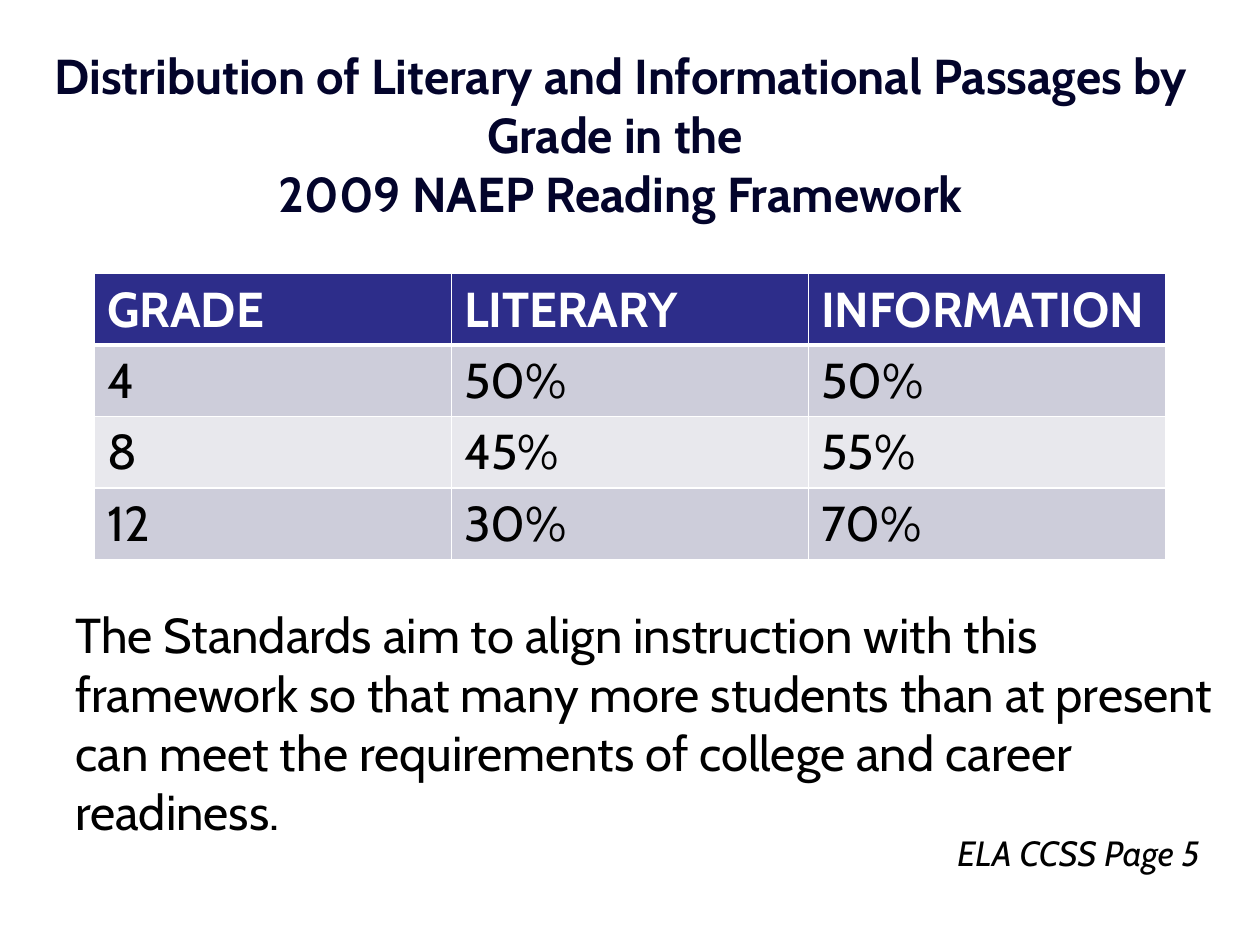
import pptx
import pptx.dml.color
import pptx.enum.text
import pptx.oxml
import pptx.oxml.ns
import pptx.util

COLORS = {
    "title": "03042B",
    "header": "2D2D8A",
    "band": "CDCDDA",
    "plain": "E8E8ED",
    "white": "FFFFFF",
    "text": "000000",
}
COLUMNS, ROWS = 40, 30


class Deck:
    font = "Cabin"
    size = 28

    def __init__(self, width, height):
        self.presentation = pptx.Presentation()
        self.presentation.slide_width = pptx.util.Inches(width)
        self.presentation.slide_height = pptx.util.Inches(height)
        self.slide = self.presentation.slides.add_slide(self.presentation.slide_layouts[6])

    def area(self, left, top, width, height):
        column = self.presentation.slide_width / COLUMNS
        row = self.presentation.slide_height / ROWS
        return [round(n * unit) for n, unit in zip((left, top, width, height), (column, row) * 2)]

    def add_words(self, paragraph, words, color="text", size=None, bold=False, italic=False):
        run = paragraph.add_run()
        run.text = words
        run.font.name = self.font
        run.font.size = pptx.util.Pt(size or self.size)
        run.font.bold = bold
        run.font.italic = italic
        run.font.color.rgb = pptx.dml.color.RGBColor.from_string(COLORS[color])

    def text(self, lines, place, align="LEFT", anchor="TOP", wrap=True, **style):
        frame = self.slide.shapes.add_textbox(*self.area(*place)).text_frame
        frame.word_wrap = wrap
        frame.vertical_anchor = pptx.enum.text.MSO_ANCHOR[anchor]
        paragraph = frame.paragraphs[0]
        paragraph.alignment = pptx.enum.text.PP_ALIGN[align]
        for number, line in enumerate(lines):
            if number:
                paragraph.add_line_break()
            self.add_words(paragraph, line, **style)

    def border(self, cell, **widths):
        properties = cell._tc.get_or_add_tcPr()
        namespace = pptx.oxml.ns.nsdecls("a")
        for position, (side, width) in enumerate(widths.items()):
            properties.insert(position, pptx.oxml.parse_xml(
                f'<a:ln{side} {namespace} w="{pptx.util.Pt(width)}"><a:solidFill>'
                f'<a:srgbClr val="{COLORS["white"]}"/></a:solidFill></a:ln{side}>'))

    def table(self, records, place):
        area = self.area(*place)
        grid = self.slide.shapes.add_table(len(records), len(records[0]), *area).table
        for r, record in enumerate(records):
            grid.rows[r].height = area[3] // len(records)
            header = r == 0
            fill = "header" if header else "band" if r % 2 else "plain"
            for c, words in enumerate(record):
                cell = grid.cell(r, c)
                cell.fill.solid()
                cell.fill.fore_color.rgb = pptx.dml.color.RGBColor.from_string(COLORS[fill])
                self.border(cell, L=1, R=1, T=3 if r == 1 else 1, B=3 if header else 1)
                self.add_words(cell.text_frame.paragraphs[0], words,
                               color="white" if header else "text", bold=header)


def main():
    deck = Deck(10, 7.5)
    deck.text(
        ["Distribution of Literary and Informational Passages by Grade in the ",
         "2009 NAEP Reading Framework"],
        (0.4, 1.2, 38.6, 6.1), align="CENTER", anchor="MIDDLE", color="title", bold=True)
    deck.table(
        [("GRADE", "LITERARY", "INFORMATION"),
         ("4", "50%", "50%"),
         ("8", "45%", "55%"),
         ("12", "30%", "70%")],
        (3, 8.68, 34, 9.08))
    deck.text(
        ["The Standards aim to align instruction with this framework so that many more "
         "students than at present can meet the requirements of college and career readiness."],
        (2, 19, 38, 7.96))
    deck.text(["ELA CCSS Page 5"], (30, 26.2, 9, 1.76), wrap=False, size=20, italic=True)
    deck.presentation.save("out.pptx")


if __name__ == "__main__":
    main()
